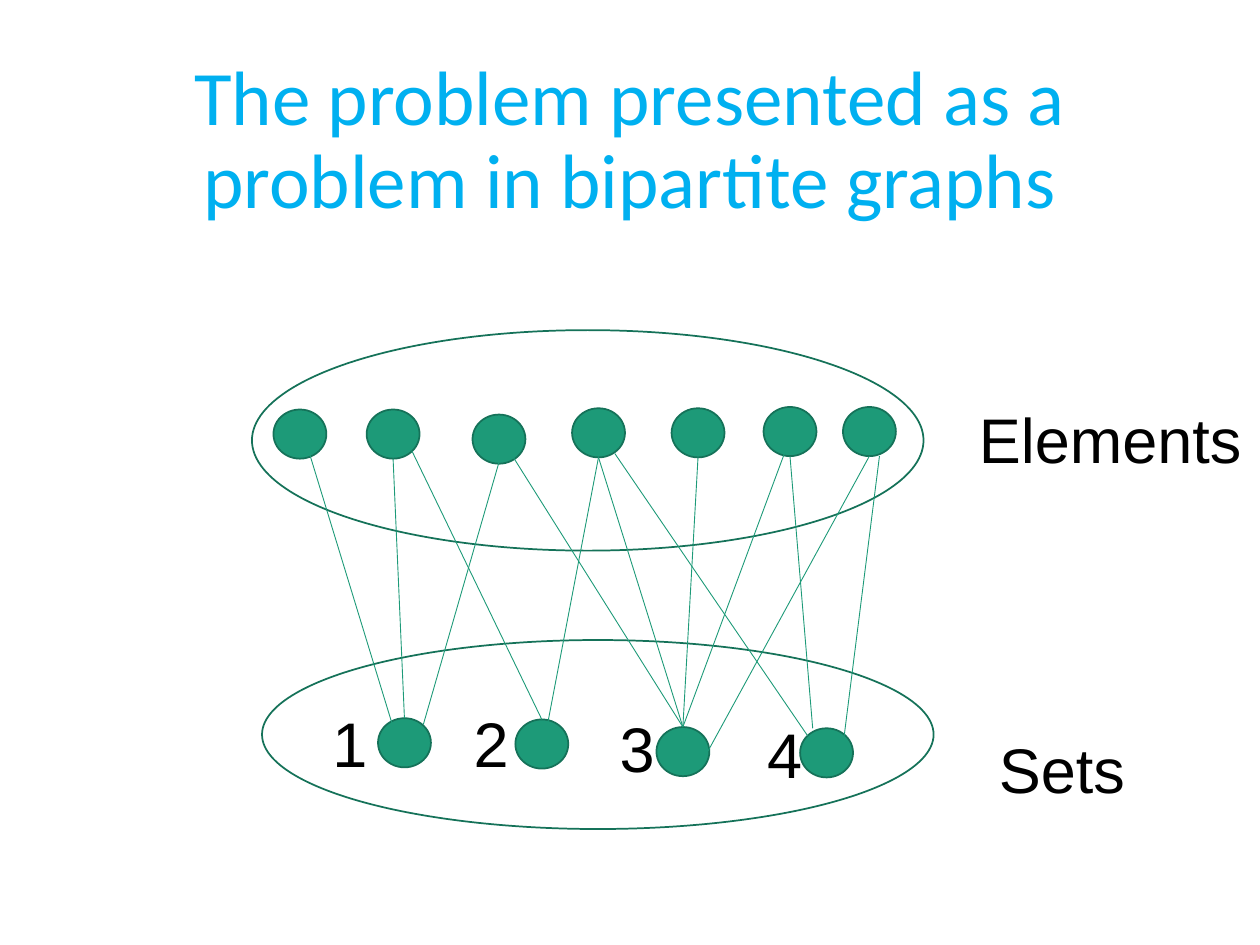
from lxml import etree
from pptx import Presentation, util as u
from pptx.dml.color import RGBColor
from pptx.enum import shapes, text
from pptx.oxml import ns

BLUE = RGBColor(0x00, 0xB0, 0xF0)
GREEN = RGBColor(0x1D, 0x9A, 0x78)
DARK_GREEN = RGBColor(0x15, 0x72, 0x59)
BLACK = RGBColor(0, 0, 0)

presentation = Presentation()
presentation.slide_width = u.Inches(10)
presentation.slide_height = u.Inches(7.5)
column = presentation.slide_width / 10
row = presentation.slide_height / 7.5
slide = presentation.slides.add_slide(presentation.slide_layouts[6])


def add_ellipse(left, top, width, height, fill=None):
    shape = slide.shapes.add_shape(
        shapes.MSO_SHAPE.OVAL, int(left * column), int(top * row),
        int(width * column), int(height * row))
    shape.shadow.inherit = False
    if fill is None:
        shape.fill.background()
    else:
        shape.fill.solid()
        shape.fill.fore_color.rgb = fill
    shape.line.color.rgb = DARK_GREEN
    shape.line.width = u.Pt(1)


def add_text(content, left, top, width, height, size, name, color):
    box = slide.shapes.add_textbox(
        int(left * column), int(top * row), int(width * column), int(height * row))
    box.text_frame.word_wrap = True
    paragraph = box.text_frame.paragraphs[0]
    paragraph.text = content
    paragraph.font.size = u.Pt(size)
    paragraph.font.name = name
    paragraph.font.color.rgb = color
    return box.text_frame


title = add_text("The problem presented as a problem in bipartite graphs",
                 0.69, 0.4, 8.62, 1.45, 44, "Calibri", BLUE)
title.vertical_anchor = text.MSO_ANCHOR.MIDDLE
title.paragraphs[0].alignment = text.PP_ALIGN.CENTER
title.paragraphs[0].line_spacing = 0.9

add_ellipse(2.08, 5.08, 5.33, 1.5)
add_ellipse(2, 2.62, 5.33, 1.75)

elements = [(2.17, 3.25), (2.91, 3.25), (3.75, 3.29), (4.54, 3.24),
            (5.33, 3.24), (6.06, 3.23), (6.69, 3.23)]
sets = [(3, 5.7), (4.09, 5.71), (5.21, 5.77), (6.35, 5.78)]
for left, top in elements + sets:
    add_ellipse(left, top, 0.42, 0.39, GREEN)

edges = [
    (3.12, 5.77, 2.42, 3.48), (3.21, 5.7, 3.12, 3.64), (3.36, 5.75, 3.96, 3.67),
    (4.3, 5.71, 3.27, 3.58), (4.33, 5.83, 4.75, 3.63),
    (5.42, 5.77, 3.98, 3.48), (5.42, 5.77, 4.75, 3.63), (5.42, 5.77, 5.54, 3.63),
    (5.42, 5.77, 6.27, 3.48), (5.62, 5.96, 6.9, 3.62),
    (6.41, 5.84, 4.88, 3.6), (6.45, 5.78, 6.27, 3.62), (6.7, 5.84, 6.98, 3.62),
]
for set_x, set_y, element_x, element_y in edges:
    edge = slide.shapes.add_connector(
        shapes.MSO_CONNECTOR.STRAIGHT, int(set_x * column), int(set_y * row),
        int(element_x * column), int(element_y * row))
    edge.line.color.rgb = GREEN
    edge.line.width = u.Pt(0.5)
    etree.SubElement(edge._element.spPr, ns.qn("a:effectLst"))

labels = [("Elements", 7.67, 3.13), ("Sets", 7.83, 5.75), ("1", 2.54, 5.54),
          ("2", 3.66, 5.54), ("3", 4.82, 5.58), ("4", 5.99, 5.63)]
for label, left, top in labels:
    add_text(label, left, top, 2.58, 0.71, 36, "Arial", BLACK)

presentation.save("out.pptx")
